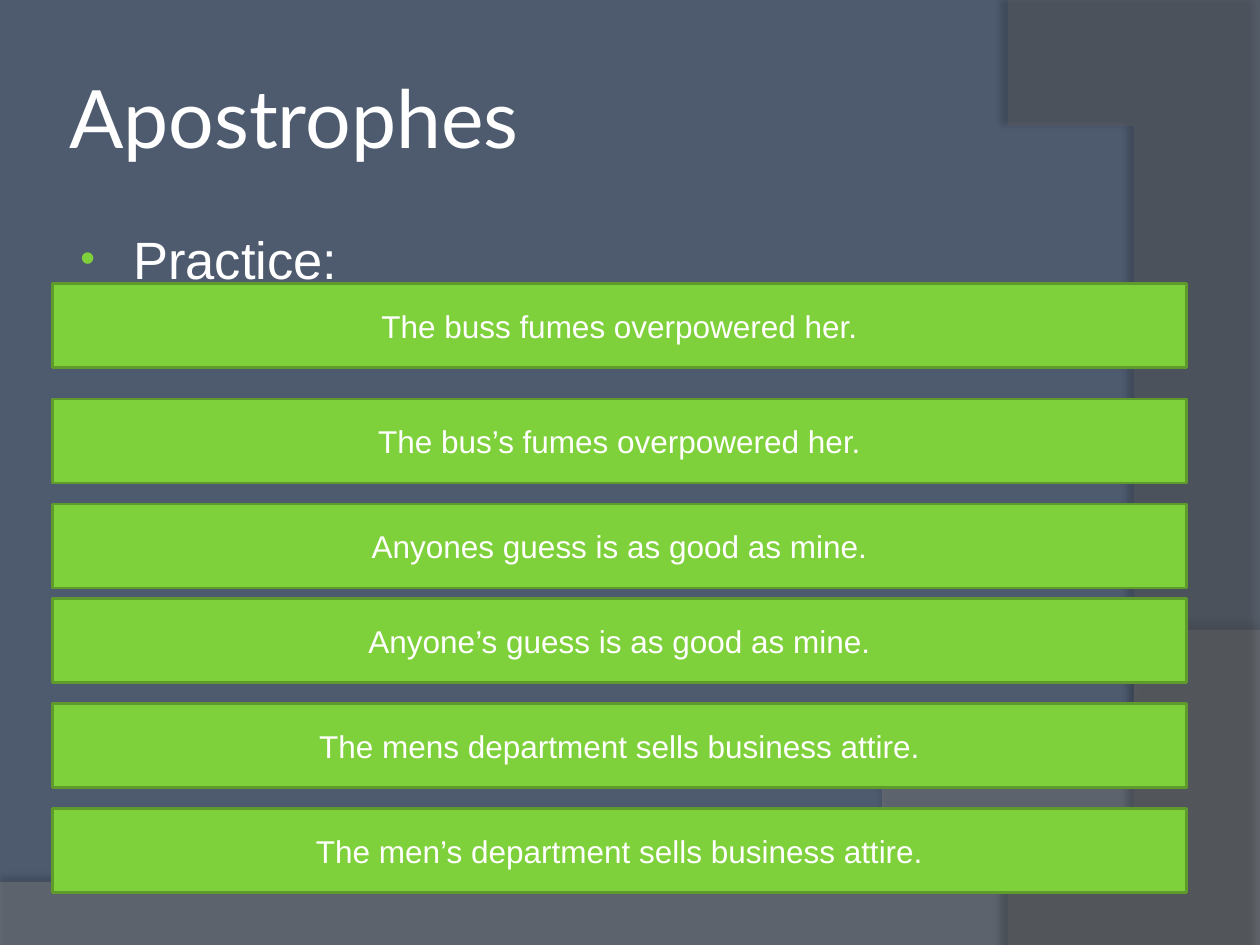
import pptx
import pptx.dml.color
import pptx.enum.shapes
import pptx.enum.text
import pptx.oxml
import pptx.oxml.ns
import pptx.util

Inches, Pt = pptx.util.Inches, pptx.util.Pt
COLORS = {
    "background": "4E5B6F", "wave": "7F7F7F", "arc": "5E5E5E", "shadow": "000000",
    "text": "FFFFFF", "bar": "7FD13B", "bar_edge": "5E9B2C",
}
WIDTH, HEIGHT = 10, 7.5
ROW = HEIGHT / 90
COLUMN = WIDTH / 120
SENTENCES = [
    (27, "The buss fumes overpowered her."),
    (38, "The bus’s fumes overpowered her."),
    (48, "Anyones guess is as good as mine."),
    (57, "Anyone’s guess is as good as mine."),
    (67, "The mens department sells business attire."),
    (77, "The men’s department sells business attire."),
]


def rgb(name):
    """Return the named colour."""
    return pptx.dml.color.RGBColor.from_string(COLORS[name])


def element(xml):
    """Parse an XML fragment whose root uses the a: prefix."""
    tag, rest = xml[1:].split(" ", 1)
    return pptx.oxml.parse_xml(f'<{tag} {pptx.oxml.ns.nsdecls("a")} {rest}')


def add_run(paragraph, words, size, font):
    """Add one run of white text."""
    run = paragraph.add_run()
    run.text = words
    run.font.size = Pt(size)
    run.font.name = font
    run.font.color.rgb = rgb("text")


def bezier(start, first, second, end, steps=48):
    """Return points along a cubic curve, without its start."""
    points = []
    for step in range(1, steps + 1):
        t = step / steps
        weights = ((1 - t) ** 3, 3 * t * (1 - t) ** 2, 3 * t * t * (1 - t), t ** 3)
        points.append(tuple(
            sum(weight * value for weight, value in zip(weights, axis))
            for axis in zip(start, first, second, end)))
    return points


def add_backdrop(slide, outline, color, opacity, shadow):
    """Draw a translucent outline with a soft shadow."""
    builder = slide.shapes.build_freeform(*outline[0], scale=Inches(1))
    builder.add_line_segments(outline[1:], close=True)
    panel = builder.convert_to_shape()
    panel.fill.solid()
    panel.fill.fore_color.rgb = rgb(color)
    panel.line.fill.background()
    properties = panel.element.spPr
    fill_color = properties.find(".//" + pptx.oxml.ns.qn("a:srgbClr"))
    fill_color.append(element(f'<a:alpha val="{opacity * 1000}"/>'))
    strength, blur, distance, angle = shadow
    properties.append(element(
        f'<a:effectLst ><a:outerShdw blurRad="{Pt(blur)}" dist="{Pt(distance)}" '
        f'dir="{angle * 60000}" algn="ctr" rotWithShape="0">'
        f'<a:srgbClr val="{COLORS["shadow"]}"><a:alpha val="{strength * 1000}"/>'
        '</a:srgbClr></a:outerShdw></a:effectLst>'))


def add_background(slide):
    """Colour the slide and draw the wave and the arc."""
    slide.background.fill.solid()
    slide.background.fill.fore_color.rgb = rgb("background")
    wave = [(0, 7.05), (0, HEIGHT), (WIDTH, HEIGHT), (WIDTH, 5.2)]
    wave += bezier(wave[-1], (5.59, 7.29), (3.91, 7.19), wave[0])
    add_backdrop(slide, wave, "wave", 45, (35, 4, 3.5, 270))
    arc = [(WIDTH, 0.02), (WIDTH, HEIGHT), (8.21, HEIGHT)]
    arc += bezier(arc[-1], (9.35, 6.19), (10.18, 3), (8, 0))
    add_backdrop(slide, arc, "arc", 40, (45, 4, 4, 180))


def add_heading(slide, left, top, width, height):
    """Place and format the title."""
    heading = slide.shapes.title
    heading.left, heading.top = Inches(left), Inches(top)
    heading.width, heading.height = Inches(width), Inches(height)
    frame = heading.text_frame
    frame.margin_left = frame.margin_right = Inches(0.05)
    frame.vertical_anchor = pptx.enum.text.MSO_ANCHOR.MIDDLE
    paragraph = frame.paragraphs[0]
    paragraph.alignment = pptx.enum.text.PP_ALIGN.LEFT
    add_run(paragraph, "Apostrophes", 46, "Lato")


def add_practice(slide, left, top, width, height):
    """Add the bulleted lead-in."""
    practice = slide.shapes.add_textbox(*map(Inches, (left, top, width, height)))
    practice.text_frame.word_wrap = True
    paragraph = practice.text_frame.paragraphs[0]
    paragraph.space_before = Pt(3)
    add_run(paragraph, "Practice:", 30, "Arial")
    properties = paragraph._p.get_or_add_pPr()
    properties.set("marL", str(Inches(0.46)))
    properties.set("indent", str(Inches(-0.42)))
    for bullet in (f'<a:buClr ><a:srgbClr val="{COLORS["bar"]}"/></a:buClr>',
                   '<a:buSzPct val="80000"/>',
                   '<a:buFont typeface="Arial"/>',
                   '<a:buChar char="•"/>'):
        properties.append(element(bullet))


def add_sentence(slide, sentence, left, top, width, height):
    """Add one sentence in a green bar."""
    bar = slide.shapes.add_shape(pptx.enum.shapes.MSO_SHAPE.RECTANGLE,
                                 *map(Inches, (left, top, width, height)))
    bar.shadow.inherit = False
    bar.fill.solid()
    bar.fill.fore_color.rgb = rgb("bar")
    bar.line.color.rgb = rgb("bar_edge")
    bar.line.width = Pt(1.5)
    bar.text_frame.word_wrap = True
    bar.text_frame.vertical_anchor = pptx.enum.text.MSO_ANCHOR.MIDDLE
    paragraph = bar.text_frame.paragraphs[0]
    paragraph.alignment = pptx.enum.text.PP_ALIGN.CENTER
    add_run(paragraph, sentence, 18, "Arial")


def main():
    """Build and save the slide."""
    deck = pptx.Presentation()
    deck.slide_width, deck.slide_height = Inches(WIDTH), Inches(HEIGHT)
    slide = deck.slides.add_slide(deck.slide_layouts.get_by_name("Title Only"))
    add_background(slide)
    add_heading(slide, 6 * COLUMN, 0.04 * HEIGHT, 98 * COLUMN, 15 * ROW)
    add_practice(slide, 6 * COLUMN, 21 * ROW, 98 * COLUMN, 0.66 * HEIGHT)
    for row, sentence in SENTENCES:
        add_sentence(slide, sentence, 5 * COLUMN, row * ROW, 108 * COLUMN, 8 * ROW)
    deck.save("out.pptx")


if __name__ == "__main__":
    main()
